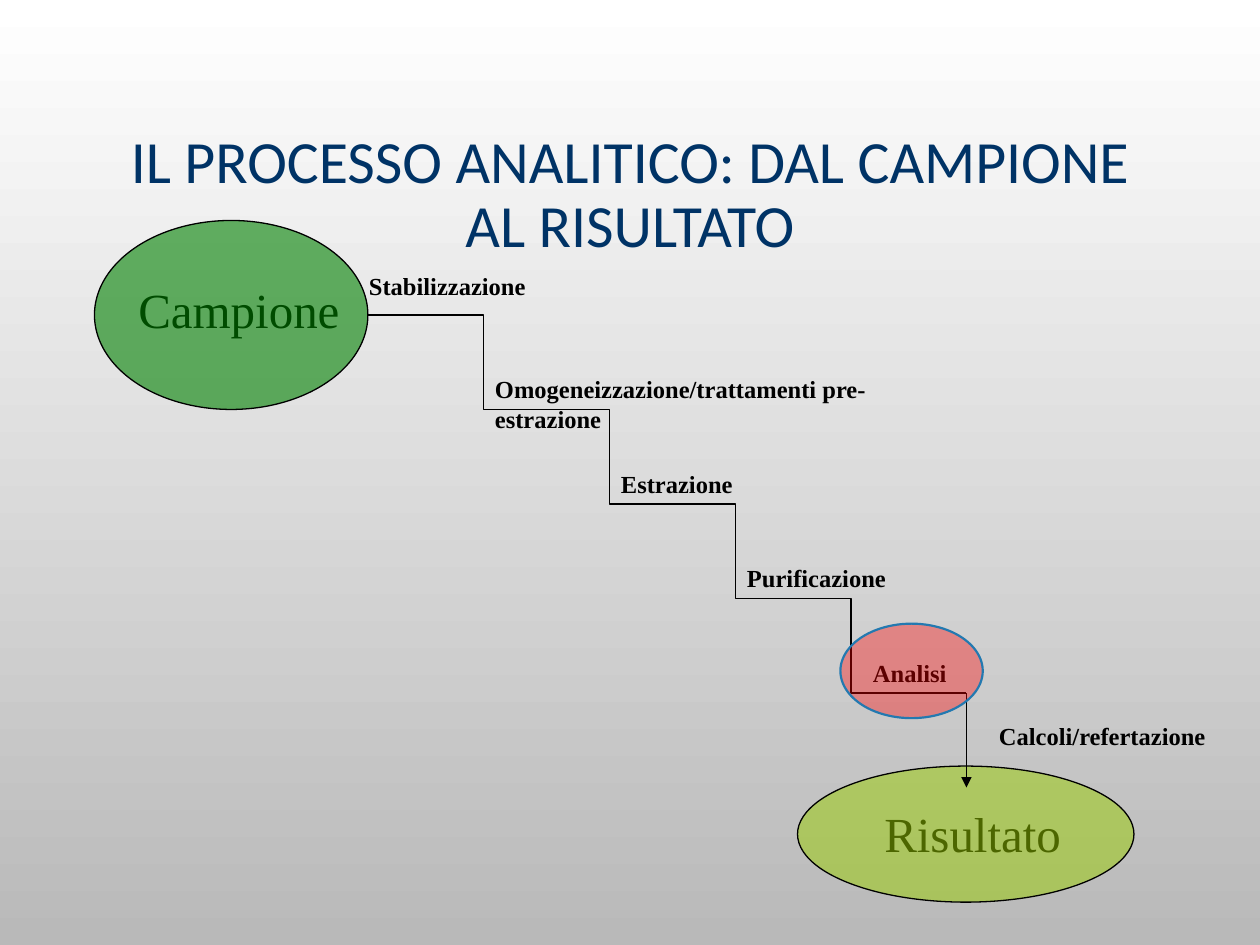
from collections import namedtuple
from dataclasses import dataclass

from pptx import Presentation
from pptx.dml.color import RGBColor
from pptx.enum.shapes import MSO_CONNECTOR, MSO_SHAPE
from pptx.enum.text import MSO_ANCHOR, MSO_AUTO_SIZE, PP_ALIGN
from pptx.oxml.ns import qn
from pptx.util import Inches, Pt
from lxml.etree import SubElement

Box = namedtuple("Box", "left top width height")


@dataclass(frozen=True)
class Theme:
    title_font: str = "Calibri"
    body_font: str = "Times New Roman"
    title_size: float = 34.2
    node_size: float = 28
    step_size: float = 14
    thin: float = 0.75
    thick: float = 1.25
    ink: str = "000000"
    title: str = "003366"
    sample: str = "008000"
    result: str = "99CC00"
    analysis: str = "FF0000"
    analysis_edge: str = "2379B0"
    sky: str = "FFFFFF"
    ground: str = "B9B9B9"


THEME = Theme()


def rgb(color):
    return RGBColor.from_string(color)


def add_text(shapes, text, box, size, font=THEME.body_font, color=THEME.ink,
             bold=False, wrap=False, grow=True, align=PP_ALIGN.LEFT,
             anchor=MSO_ANCHOR.TOP, line_spacing=None):
    label = shapes.add_textbox(*map(Inches, box))
    frame = label.text_frame
    frame.word_wrap = wrap
    frame.auto_size = MSO_AUTO_SIZE.SHAPE_TO_FIT_TEXT if grow else MSO_AUTO_SIZE.NONE
    frame.vertical_anchor = anchor
    paragraph = frame.paragraphs[0]
    paragraph.alignment = align
    paragraph.line_spacing = line_spacing
    for number, line in enumerate(text.split("\n")):
        if number:
            paragraph.add_line_break()
        run = paragraph.add_run()
        run.text = line
        run.font.name = font
        run.font.size = Pt(size)
        run.font.bold = bold
        run.font.color.rgb = rgb(color)


def add_ellipse(shapes, box, fill, opacity, edge=THEME.ink, weight=THEME.thin):
    ellipse = shapes.add_shape(MSO_SHAPE.OVAL, *map(Inches, box))
    ellipse.shadow.inherit = False
    ellipse.fill.solid()
    ellipse.fill.fore_color.rgb = rgb(fill)
    tint = ellipse.fill._xPr.find(qn("a:solidFill"))[0]
    SubElement(tint, qn("a:alpha"), val=str(opacity * 1000))
    ellipse.line.color.rgb = rgb(edge)
    ellipse.line.width = Pt(weight)


def add_line(shapes, kind, start, end, arrow=False):
    line = shapes.add_connector(kind, *map(Inches, start + end))
    line.line.color.rgb = rgb(THEME.ink)
    line.line.width = Pt(THEME.thin)
    if arrow:
        SubElement(line.line._get_or_add_ln(), qn("a:tailEnd"), type="triangle")
    SubElement(line._element.spPr, qn("a:effectLst"))


def paint_background(slide):
    fill = slide.background.fill
    fill.gradient()
    fill.gradient_angle = 270
    for stop, color in zip(fill.gradient_stops, (THEME.sky, THEME.ground)):
        stop.color.rgb = rgb(color)
    fill.gradient_stops[0].position = 0
    fill.gradient_stops[1].position = 1


def draw_title(slide, box):
    add_text(slide.shapes, "IL PROCESSO ANALITICO: DAL CAMPIONE\nAL RISULTATO", box,
             THEME.title_size, font=THEME.title_font, color=THEME.title, wrap=True,
             grow=False, align=PP_ALIGN.CENTER, anchor=MSO_ANCHOR.MIDDLE,
             line_spacing=0.9)


def draw_node(shapes, box, text, offset, size, fill, opacity):
    """Name seen through a translucent ellipse."""
    dx, dy = offset
    add_text(shapes, text, Box(box.left + dx, box.top + dy, *size), THEME.node_size)
    add_ellipse(shapes, box, fill, opacity)


def draw_staircase(slide, box):
    """Four elbow steps going down to the right, then the arrow to the result."""
    rise = box.height / 5
    run = 1.83
    for level, dx in enumerate((0, 1, 2, 2.92)):
        x, y = box.left + dx, box.top + level * rise
        add_line(slide.shapes, MSO_CONNECTOR.ELBOW, (x, y), (x + run, y + rise))
    right, bottom = box.left + box.width, box.top + box.height
    add_line(slide.shapes, MSO_CONNECTOR.STRAIGHT, (right, bottom - rise),
             (right, bottom), arrow=True)


def draw_step_names(slide, box):
    steps = [  # text, offset from the box, width, wraps
        ("Stabilizzazione", 0, 0, 1.5, False),
        ("Omogeneizzazione/trattamenti pre-estrazione", 1, 0.82, 3.9, True),
        ("Estrazione", 2, 1.57, 1.16, False),
        ("Purificazione", 3, 2.32, 1.42, False),
        ("Analisi", 4, 3.07, 0.88, False),
        ("Calcoli/refertazione", 5, 3.57, 1.94, False),
    ]
    for text, dx, dy, width, wrap in steps:
        add_text(slide.shapes, text, Box(box.left + dx, box.top + dy, width, 0.33),
                 THEME.step_size, bold=True, wrap=wrap, grow=not wrap)


def main():
    deck = Presentation()
    deck.slide_width, deck.slide_height = Inches(10), Inches(7.5)
    slide = deck.slides.add_slide(deck.slide_layouts[6])

    paint_background(slide)
    draw_title(slide, Box(0.75, 0.68, 8.5, 1.75))
    # Start and end of the process
    result_group = slide.shapes.add_group_shape()
    draw_node(result_group.shapes, Box(6.33, 6.08, 2.67, 1.08), "Risultato",
              (0.59, 0.25), (1.6, 0.57), THEME.result, 50)
    draw_node(slide.shapes, Box(0.75, 1.75, 2.17, 1.5), "Campione",
              (0.25, 0.42), (1.89, 0.57), THEME.sample, 60)
    # Steps between them
    draw_staircase(slide, Box(2.92, 2.5, 4.75, 3.75))
    draw_step_names(slide, Box(2.83, 2.1, 6.94, 3.9))
    # Highlight on the analysis step
    add_ellipse(slide.shapes, Box(6.67, 4.95, 1.13, 0.75), THEME.analysis, 36,
                edge=THEME.analysis_edge, weight=THEME.thick)
    deck.save("out.pptx")


if __name__ == "__main__":
    main()
